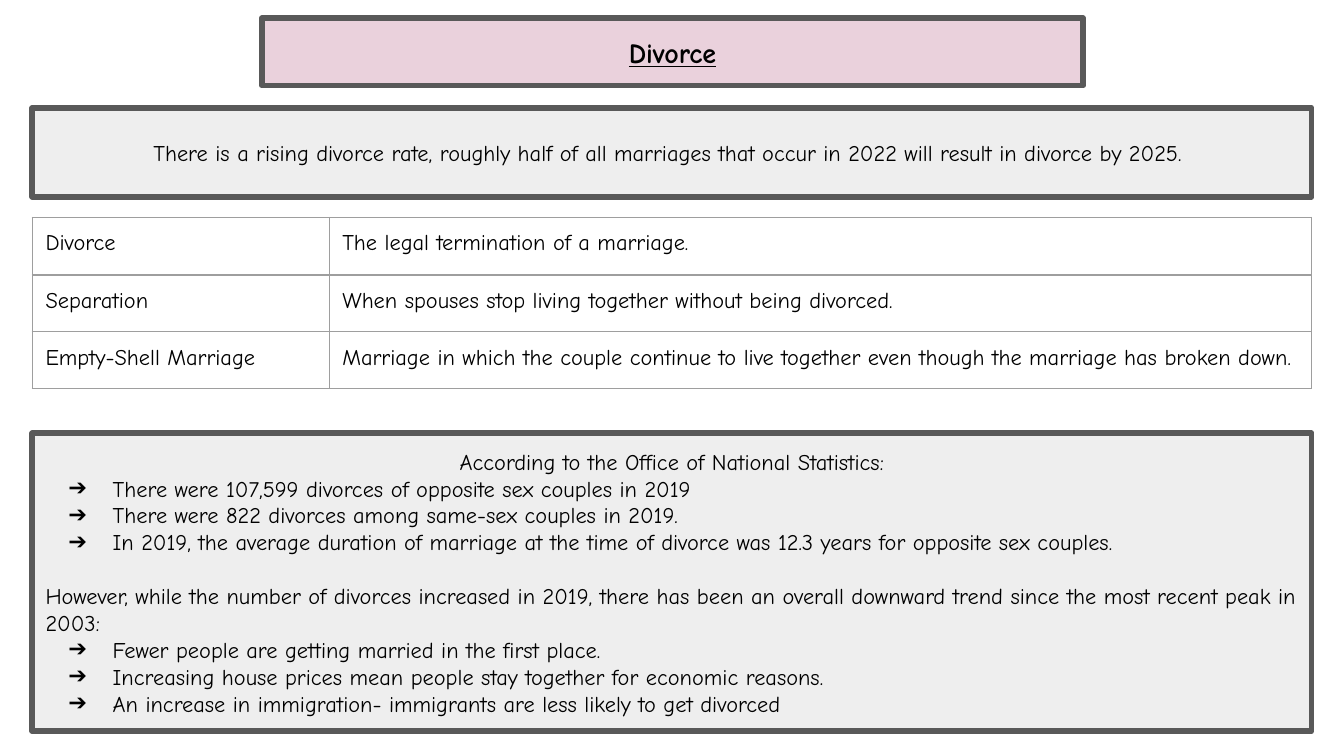
from lxml.etree import SubElement
from pptx import Presentation
from pptx.dml.color import RGBColor
from pptx.enum.shapes import MSO_SHAPE
from pptx.enum.text import MSO_ANCHOR, MSO_AUTO_SIZE, PP_ALIGN
from pptx.oxml.ns import qn
from pptx.util import Cm, Pt

PINK = RGBColor(0xEA, 0xD1, 0xDC)
PALE_GREY = RGBColor(0xEE, 0xEE, 0xEE)
DARK_GREY = RGBColor(0x59, 0x59, 0x59)
RULE_GREY = RGBColor(0x9E, 0x9E, 0x9E)
BLACK = RGBColor(0, 0, 0)

LEFT, WIDTH = 0.61, 24.18
DEFINITIONS = [
    ("Divorce", "The legal termination of a marriage."),
    ("Separation", "When spouses stop living together without being divorced."),
    ("Empty-Shell Marriage",
     "Marriage in which the couple continue to live together even though the marriage has broken down."),
]
STATISTICS = [
    "There were 107,599 divorces of opposite sex couples in 2019",
    "There were 822 divorces among same-sex couples in 2019.",
    "In 2019, the average duration of marriage at the time of divorce was 12.3 years for opposite sex couples.",
]
REASONS = [
    "Fewer people are getting married in the first place.",
    "Increasing house prices mean people stay together for economic reasons.",
    "An increase in immigration- immigrants are less likely to get divorced",
]


class SlideBuilder:
    """Draws framed text and tables on one slide in a shared style."""

    font_name = "Comic Neue"
    inset = Cm(0.25)

    def __init__(self, slide):
        self.slide = slide

    def set_font(self, para, size=12, heading=False):
        font = para.font
        font.name, font.size = self.font_name, Pt(size)
        font.bold = font.underline = heading
        font.color.rgb = BLACK

    def set_insets(self, target):
        target.margin_left = target.margin_right = self.inset
        target.margin_top = target.margin_bottom = self.inset

    def frame(self, box, left, top, width, height, fill):
        box.left, box.top, box.width, box.height = map(Cm, (left, top, width, height))
        box.fill.solid()
        box.fill.fore_color.rgb = fill
        box.line.color.rgb = DARK_GREY
        box.line.width = Pt(3)
        text = box.text_frame
        text.word_wrap = True
        text.auto_size = MSO_AUTO_SIZE.NONE
        text.vertical_anchor = MSO_ANCHOR.MIDDLE
        self.set_insets(text)
        return text

    def title(self, wording, *place):
        para = self.frame(self.slide.shapes.title, *place, PINK).paragraphs[0]
        para.text, para.alignment = wording, PP_ALIGN.CENTER
        self.set_font(para, 15, heading=True)

    def statement(self, wording, *place):
        box = self.slide.shapes.add_shape(MSO_SHAPE.RECTANGLE, 0, 0, 0, 0)
        box.shadow.inherit = False
        para = self.frame(box, *place, PALE_GREY).paragraphs[0]
        para.text, para.alignment = wording, PP_ALIGN.CENTER
        self.set_font(para)

    def body(self, *place):
        return self.frame(self.slide.placeholders[1], *place, PALE_GREY)

    def line(self, para, wording, bullet=True, align=PP_ALIGN.LEFT, gap=0):
        para.text, para.alignment = wording, align
        para.space_before = Pt(gap)
        properties = para._p.get_or_add_pPr()
        properties.set("marL", str(Cm(1.27) if bullet else 0))
        properties.set("indent", str(Cm(-0.84) if bullet else 0))
        if bullet:
            color = SubElement(properties, qn("a:buClr"))
            SubElement(color, qn("a:srgbClr"), val=str(BLACK))
            SubElement(properties, qn("a:buFont"), typeface=self.font_name)
            SubElement(properties, qn("a:buChar"), char="➔")
        else:
            SubElement(properties, qn("a:buNone"))
        self.set_font(para)

    def cell(self, cell, wording):
        self.set_insets(cell)
        para = cell.text_frame.paragraphs[0]
        para.text = wording
        self.set_font(para)
        properties = cell._tc.get_or_add_tcPr()
        for side in ("lnL", "lnR", "lnT", "lnB"):
            border = SubElement(properties, qn(f"a:{side}"), w=str(Pt(0.75)))
            fill = SubElement(border, qn("a:solidFill"))
            SubElement(fill, qn("a:srgbClr"), val=str(RULE_GREY))
        cell.fill.background()

    def table(self, rows, left, top, widths, heights):
        table = self.slide.shapes.add_table(
            len(rows), len(widths), Cm(left), Cm(top), Cm(sum(widths)), Cm(sum(heights))).table
        table.first_row = table.horz_banding = False
        for column, width in zip(table.columns, widths):
            column.width = Cm(width)
        for row, height, wordings in zip(table.rows, heights, rows):
            row.height = Cm(height)
            for cell, wording in zip(row.cells, wordings):
                self.cell(cell, wording)


def main():
    deck = Presentation()
    deck.slide_width, deck.slide_height = Cm(25.4), Cm(14.29)
    page = SlideBuilder(deck.slides.add_slide(deck.slide_layouts[1]))

    page.title("Divorce", 4.95, 0.34, 15.52, 1.28)
    page.statement(
        "There is a rising divorce rate, roughly half of all marriages that occur in 2022 "
        "will result in divorce by 2025. ", LEFT, 2.04, WIDTH, 1.68)
    page.table(DEFINITIONS, LEFT, 4.11, (5.61, 18.57), (1.09, 1.07, 1.07))

    text = page.body(LEFT, 8.19, WIDTH, 5.63)
    page.line(text.paragraphs[0], "According to the Office of National Statistics:",
              bullet=False, align=PP_ALIGN.CENTER)
    for wording in STATISTICS:
        page.line(text.add_paragraph(), wording)
    page.line(text.add_paragraph(),
              "However, while the number of divorces increased in 2019, there has been an overall "
              "downward trend since the most recent peak in 2003:", bullet=False, gap=14.4)
    for wording in REASONS:
        page.line(text.add_paragraph(), wording)

    deck.save("out.pptx")


if __name__ == "__main__":
    main()
